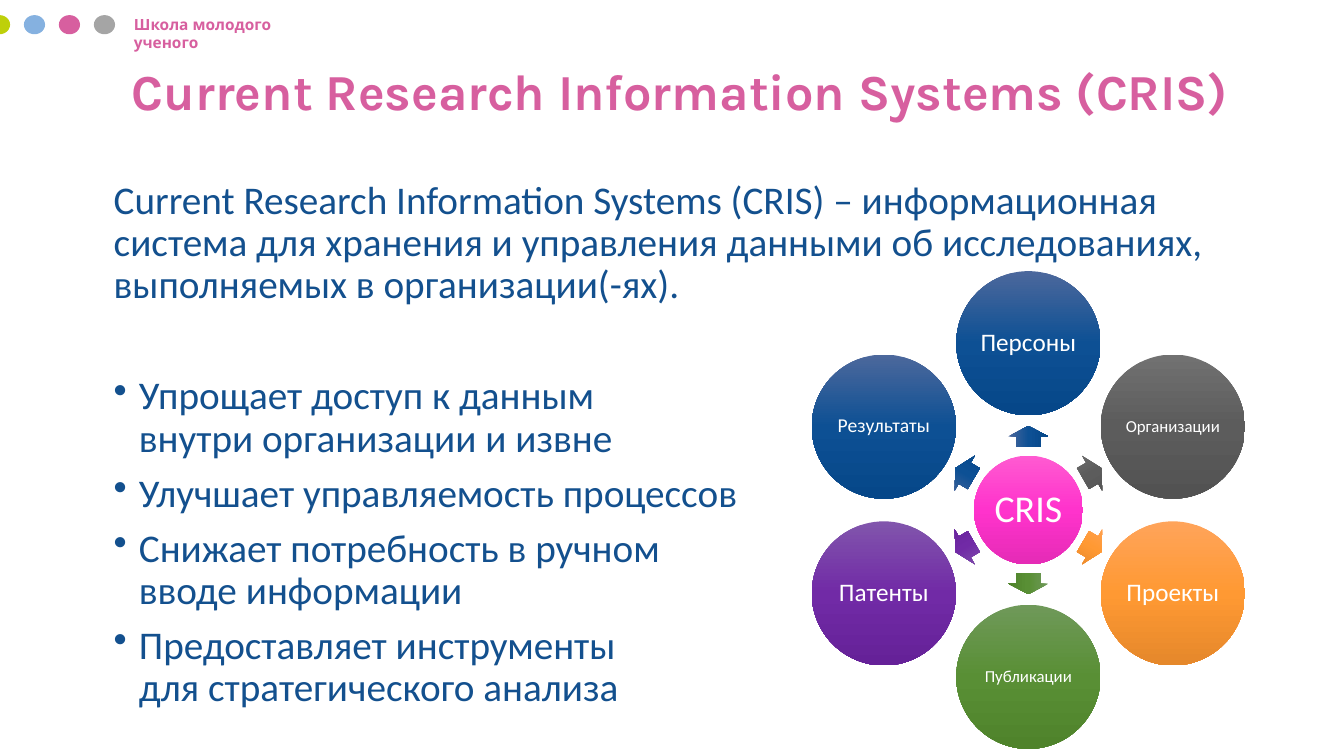
import math

from lxml import etree
from pptx import Presentation
from pptx import util as u
from pptx.dml.color import RGBColor
from pptx.enum import shapes, text
from pptx.oxml import ns, parse_xml

PINK = RGBColor(0xD7, 0x5F, 0x9F)
NAVY = RGBColor(0x13, 0x50, 0x8E)
WHITE = RGBColor(0xFF, 0xFF, 0xFF)
LIME = RGBColor(0xBE, 0xD0, 0x0A)
SKY = RGBColor(0x85, 0xB1, 0xE0)
SILVER = RGBColor(0xA5, 0xA5, 0xA5)
MAGENTA_SHADES = [RGBColor(0xFF, 0x5A, 0xD1), RGBColor(0xFF, 0x33, 0xCC), RGBColor(0xE5, 0x2B, 0xB6)]
BLUE_SHADES = [RGBColor(0x4C, 0x68, 0x9C), RGBColor(0x0D, 0x50, 0x94), RGBColor(0x06, 0x47, 0x89)]
GREY_SHADES = [RGBColor(0x71, 0x71, 0x71), RGBColor(0x5C, 0x5C, 0x5C), RGBColor(0x52, 0x52, 0x52)]
ORANGE_SHADES = [RGBColor(0xFF, 0xA4, 0x5A), RGBColor(0xFF, 0x99, 0x33), RGBColor(0xE5, 0x88, 0x2B)]
GREEN_SHADES = [RGBColor(0x6F, 0x99, 0x59), RGBColor(0x59, 0x8F, 0x35), RGBColor(0x4F, 0x83, 0x2B)]
PURPLE_SHADES = [RGBColor(0x81, 0x55, 0xAC), RGBColor(0x71, 0x2A, 0xA6), RGBColor(0x65, 0x21, 0x98)]

DEFINITION = ("Current Research Information Systems (CRIS) – информационная система для хранения "
              "и управления данными об исследованиях, выполняемых в организации(-ях).")
BENEFITS = [
    "Упрощает доступ к данным\vвнутри организации и извне",
    "Улучшает управляемость процессов",
    "Снижает потребность в ручном\vвводе информации",
    "Предоставляет инструменты\vдля стратегического анализа",
]
SATELLITES = [
    ("Персоны", 18, BLUE_SHADES),
    ("Организации", 12, GREY_SHADES),
    ("Проекты", 18, ORANGE_SHADES),
    ("Публикации", 12, GREEN_SHADES),
    ("Патенты", 18, PURPLE_SHADES),
    ("Результаты", 14, BLUE_SHADES),
]


def write(para, words, *, size, color, font="Calibri", bold=False, align=None,
          line=0.9, before=0, bullet=None):
    if bullet:
        props = para._p.get_or_add_pPr()
        props.set("marL", str(u.Inches(0.25)))
        props.set("indent", str(u.Inches(-0.25)))
        etree.SubElement(props, ns.qn("a:buChar")).set("char", bullet)
    para.text = words
    para.alignment = align
    para.line_spacing = line
    para.space_before = u.Pt(before)
    for span in para.runs:
        span.font.name = font
        span.font.size = u.Pt(size)
        span.font.bold = bold
        span.font.color.rgb = color


def add_text_box(page, left, top, width, height, anchor=text.MSO_ANCHOR.TOP):
    box = page.shapes.add_textbox(*map(u.Inches, (left, top, width, height)))
    box.text_frame.word_wrap = True
    box.text_frame.vertical_anchor = anchor
    return box.text_frame


def add_plain_shape(page, kind, left, top, width, height):
    shape = page.shapes.add_shape(kind, *map(u.Inches, (left, top, width, height)))
    shape.shadow.inherit = False
    shape.line.fill.background()
    return shape


def shade(shape, shades):
    shape.fill.gradient()
    shape.fill.gradient_angle = 270
    stops = shape._element.spPr.find(ns.qn("a:gradFill")).find(ns.qn("a:gsLst"))
    for stop in list(stops):
        stops.remove(stop)
    for position, color in zip((0, 50000, 100000), shades):
        stops.append(parse_xml(f'<a:gs {ns.nsdecls("a")} pos="{position}">'
                               f'<a:srgbClr val="{color}"/></a:gs>'))


def add_header(page, left, top):
    for index, color in enumerate((LIME, SKY, PINK, SILVER)):
        dot = add_plain_shape(page, shapes.MSO_SHAPE.OVAL, left + index * 0.347, top + 0.05, 0.21, 0.19)
        dot.fill.solid()
        dot.fill.fore_color.rgb = color
    frame = add_text_box(page, left + 1.34, top, 1.66, 0.29)
    write(frame.paragraphs[0], "Школа молодого ученого", size=11, color=PINK,
          font="Karla", bold=True, line=1)


def add_title(page, left, top, width, height):
    frame = add_text_box(page, left, top, width, height, text.MSO_ANCHOR.MIDDLE)
    write(frame.paragraphs[0], "Current Research Information Systems (CRIS)", size=36,
          color=PINK, font="Karla", bold=True)


def add_body(page, left, top, width, height):
    frame = add_text_box(page, left, top, width, height)
    write(frame.paragraphs[0], DEFINITION, size=28, color=NAVY)
    for index, benefit in enumerate(BENEFITS):
        write(frame.add_paragraph(), benefit, size=28, color=NAVY,
              before=9 if index else 49, bullet="•")


def add_disc(page, center_x, center_y, diameter, words, size, shades, inset):
    disc = add_plain_shape(page, shapes.MSO_SHAPE.OVAL, center_x - diameter / 2,
                           center_y - diameter / 2, diameter, diameter)
    shade(disc, shades)
    frame = disc.text_frame
    frame.word_wrap = True
    frame.vertical_anchor = text.MSO_ANCHOR.MIDDLE
    frame.margin_left = frame.margin_right = u.Inches(inset)
    frame.margin_top = frame.margin_bottom = u.Inches(inset)
    write(frame.paragraphs[0], words, size=size, color=WHITE, align=text.PP_ALIGN.CENTER)


def add_wheel(page, left, top, width, height):
    center_x, center_y = left + width / 2, top + height / 2
    diameter, arrow_length, arrow_width, arrow_orbit = 1.43, 0.21, 0.4, 0.73
    orbit = (height - diameter) / 2
    add_disc(page, center_x, center_y, 1.08, "CRIS", 27, MAGENTA_SHADES, 0.04)
    for index, (words, size, shades) in enumerate(SATELLITES):
        degrees = (270 + index * 360 / len(SATELLITES)) % 360
        across, down = math.cos(math.radians(degrees)), math.sin(math.radians(degrees))
        arrow = add_plain_shape(page, shapes.MSO_SHAPE.RIGHT_ARROW,
                                center_x + arrow_orbit * across - arrow_length / 2,
                                center_y + arrow_orbit * down - arrow_width / 2,
                                arrow_length, arrow_width)
        arrow.adjustments[0] = 0.6
        arrow.adjustments[1] = 0.5
        arrow.rotation = degrees
        shade(arrow, shades)
        add_disc(page, center_x + orbit * across, center_y + orbit * down, diameter,
                 words, size, shades, 0.02)


def main():
    deck = Presentation()
    deck.slide_width, deck.slide_height = u.Inches(13.33), u.Inches(7.5)
    page = deck.slides.add_slide(deck.slide_layouts[6])
    add_header(page, -0.11, 0.1)
    add_title(page, 1.21, 0.36, 11.16, 1.14)
    add_body(page, 1.03, 1.74, 11.07, 5.5)
    add_wheel(page, 8.05, 2.69, 4.3, 4.74)
    deck.save("out.pptx")


if __name__ == "__main__":
    main()
